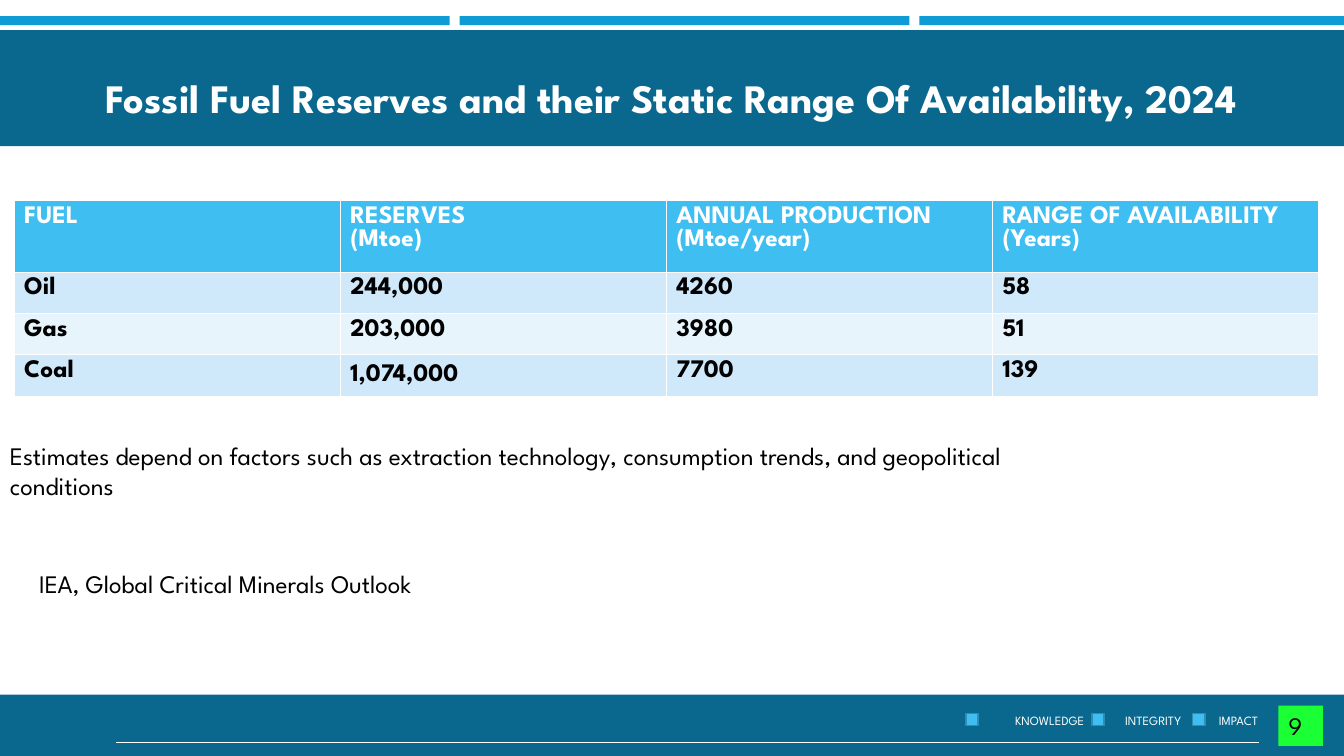
from lxml.etree import SubElement
from pptx import Presentation
from pptx.dml.color import RGBColor
from pptx.enum.shapes import MSO_CONNECTOR, MSO_SHAPE
from pptx.enum.text import MSO_ANCHOR, PP_ALIGN
from pptx.oxml.ns import qn
from pptx.util import Inches, Pt

FONT = "League Spartan"
NAVY, SKY, BAND, WHITE, BLACK = "0A688E", "3FBEF1", "0F9CD5", "FFFFFF", "000000"
STRIPES = ["CFE8FA", "E8F4FC"]
FUELS = [
    ["FUEL", "RESERVES\n(Mtoe)", "ANNUAL PRODUCTION\n(Mtoe/year)",
     "RANGE OF AVAILABILITY\n(Years)"],
    ["Oil", "244,000", "4260", "58"],
    ["Gas", "203,000", "3980", "51"],
    ["Coal", "1,074,000", "7700", "139"],
]


def color(code):
    return RGBColor.from_string(code)


def style_text(frame, size, code, bold=False, align=PP_ALIGN.LEFT):
    for paragraph in frame.paragraphs:
        paragraph.alignment = align
        font = paragraph.font
        font.name, font.size, font.bold = FONT, Pt(size), bold
        font.color.rgb = color(code)


def add_block(slide, left, top, width, height, fill, outline=None):
    block = slide.shapes.add_shape(MSO_SHAPE.RECTANGLE, Inches(left), Inches(top),
                                   Inches(width), Inches(height))
    block.shadow.inherit = False
    block.fill.solid()
    block.fill.fore_color.rgb = color(fill)
    if outline:
        block.line.color.rgb = color(outline)
        block.line.width = Pt(1)
    else:
        block.line.fill.background()
    return block


def add_words(slide, left, top, width, height, words):
    box = slide.shapes.add_textbox(Inches(left), Inches(top), Inches(width), Inches(height))
    box.text_frame.word_wrap = True
    box.text_frame.text = words
    return box.text_frame


def add_header(slide, left, top, width, height):
    strip, gap = 4.46, 0.1
    for i in range(3):
        add_block(slide, i * (strip + gap), top - 0.14, strip, 0.09, BAND)
    add_block(slide, left, top, width, height, NAVY)
    title = add_words(slide, left + 0.95, top + 0.14, 11.5, 0.82,
                      "Fossil Fuel Reserves and their Static Range Of Availability, 2024")
    title.vertical_anchor = MSO_ANCHOR.BOTTOM
    title.paragraphs[0].line_spacing = 0.9
    style_text(title, 28.8, WHITE, True, PP_ALIGN.CENTER)


def add_borders(cell):
    properties = cell._tc.get_or_add_tcPr()
    for i, side in enumerate(["lnL", "lnR", "lnT", "lnB"]):
        edge = properties.makeelement(qn(f"a:{side}"), {"w": str(Pt(1))})
        fill = SubElement(edge, qn("a:solidFill"))
        SubElement(fill, qn("a:srgbClr"), val=WHITE)
        properties.insert(i, edge)


def add_fuel_table(slide, left, top, width, height):
    header_height = 0.71
    row_height = (height - header_height) / (len(FUELS) - 1)
    table = slide.shapes.add_table(len(FUELS), len(FUELS[0]), Inches(left), Inches(top),
                                   Inches(width), Inches(height)).table
    for column in table.columns:
        column.width = Inches(width / len(FUELS[0]))
    for r, values in enumerate(FUELS):
        table.rows[r].height = Inches(row_height if r else header_height)
        for c, value in enumerate(values):
            cell = table.cell(r, c)
            cell.text = value
            cell.fill.solid()
            cell.fill.fore_color.rgb = color(STRIPES[(r - 1) % 2] if r else SKY)
            style_text(cell.text_frame, 18, BLACK if r else WHITE, True)
            add_borders(cell)
    table.cell(3, 1).vertical_anchor = MSO_ANCHOR.MIDDLE


def add_notes(slide, left, top):
    estimates = add_words(
        slide, left, top, 10.15, 0.71,
        "Estimates depend on factors such as extraction technology, "
        "consumption trends, and geopolitical conditions")
    citation = add_words(slide, left + 0.29, top + 1.27, 4.84, 0.4,
                         "IEA, Global Critical Minerals Outlook")
    for note in (estimates, citation):
        style_text(note, 18, BLACK)


def add_footer(slide, left, top, width, height):
    add_block(slide, left, top, width, height, NAVY)
    rule = slide.shapes.add_connector(MSO_CONNECTOR.STRAIGHT, Inches(1.15), Inches(top + 0.47),
                                      Inches(12.49), Inches(top + 0.47))
    rule.line.color.rgb = color(WHITE)
    rule.line.width = Pt(0.5)
    SubElement(rule._element.spPr, qn("a:effectLst"))

    mottos = add_words(slide, 8.7, top + 0.13, 3.88, 0.25, "\tKNOWLEDGE\tINTEGRITY\tIMPACT")
    mottos.margin_right = 0
    tabs = SubElement(mottos.paragraphs[0]._p.get_or_add_pPr(), qn("a:tabLst"))
    for stop in (1.27, 2.36, 3.29):
        SubElement(tabs, qn("a:tab"), pos=str(Inches(stop)), algn="l")
    style_text(mottos, 9, WHITE)
    for marker_left in (9.58, 10.83, 11.83):
        add_block(slide, marker_left, top + 0.19, 0.12, 0.12, SKY, "2F8DB2")

    page = add_block(slide, 12.68, top + 0.11, 0.44, 0.4, "1BFF35").text_frame
    page.text = "9"
    page.vertical_anchor = MSO_ANCHOR.TOP
    style_text(page, 18, BLACK)


def main():
    deck = Presentation()
    deck.slide_width, deck.slide_height = Inches(13.33), Inches(7.5)
    slide = deck.slides.add_slide(deck.slide_layouts[6])
    add_header(slide, -0.04, 0.3, 13.38, 1.15)
    add_fuel_table(slide, 0.14, 1.99, 12.94, 1.94)
    add_notes(slide, 0, 4.32)
    add_footer(slide, -0.04, 6.89, 13.38, 0.79)
    deck.save("out.pptx")


if __name__ == "__main__":
    main()
